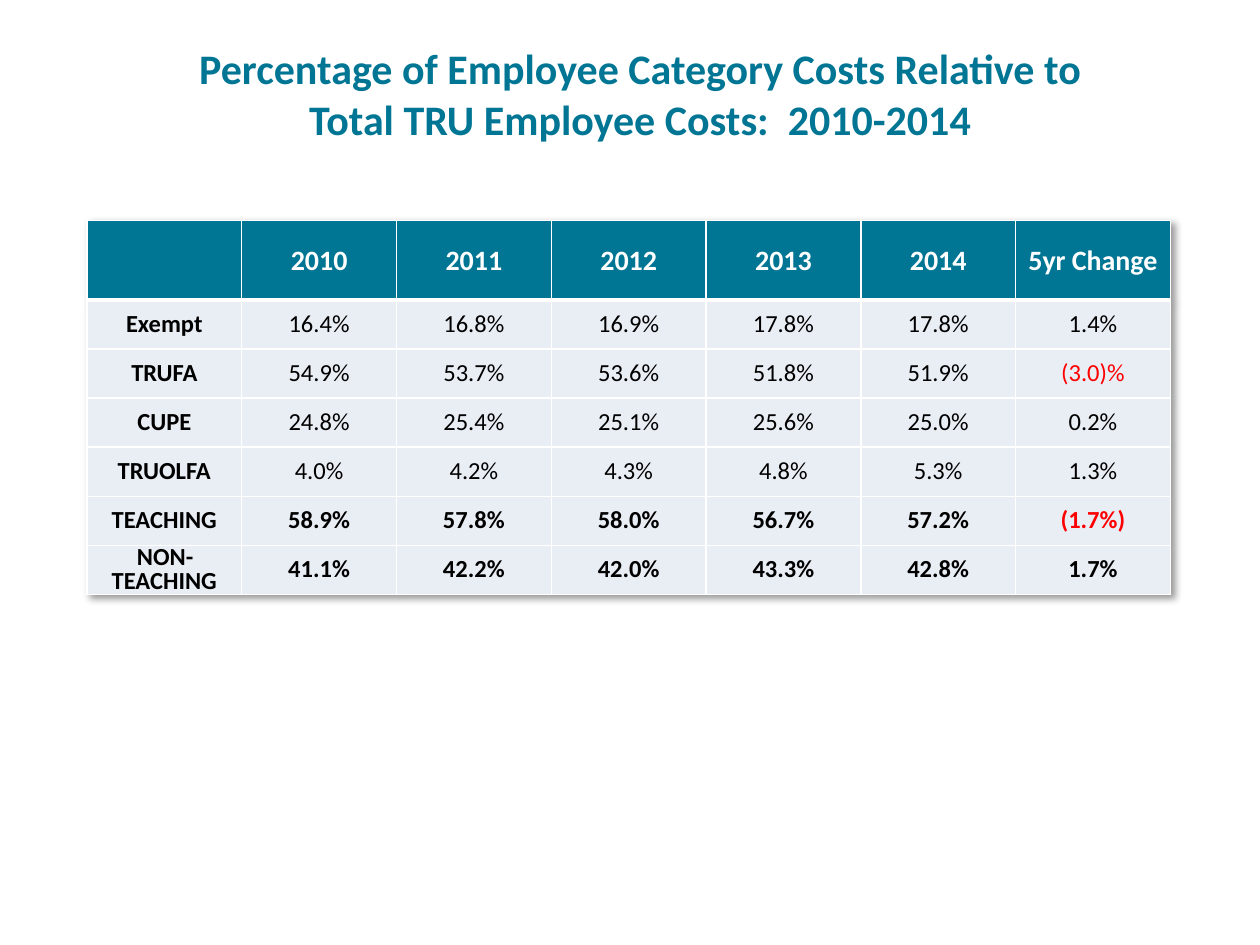
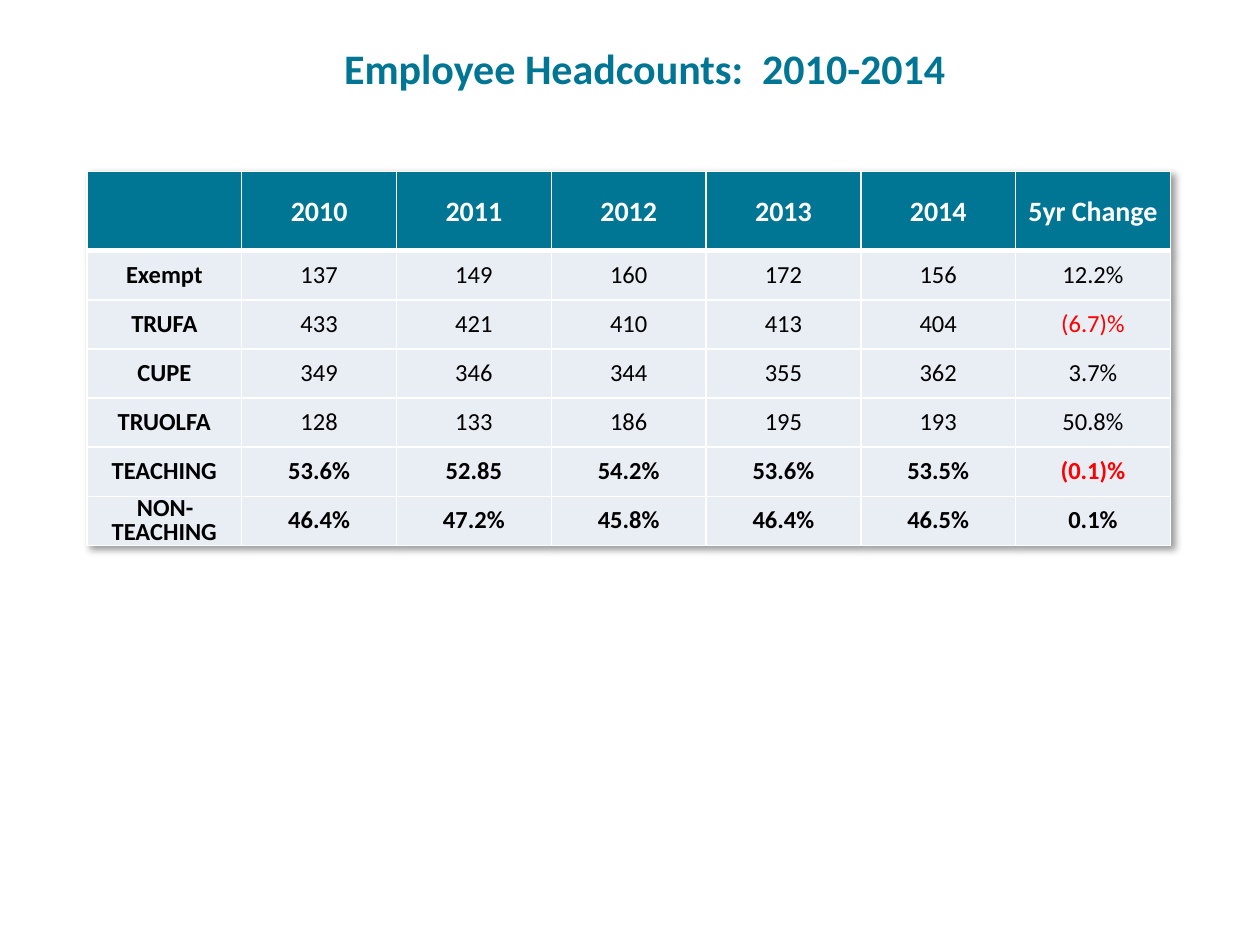
from lxml.etree import SubElement
from pptx import Presentation
from pptx.dml.color import RGBColor
from pptx.enum.text import MSO_ANCHOR, MSO_AUTO_SIZE, PP_ALIGN
from pptx.oxml import parse_xml
from pptx.oxml.ns import qn
from pptx.util import Inches, Pt

COLORS = {"teal": "007694", "pale": "E9EDF4", "white": "FFFFFF",
          "black": "000000", "red": "FF0000"}
HEADS = ["", "2010", "2011", "2012", "2013", "2014", "5yr Change"]
GROUPS = ["Exempt", "TRUFA", "CUPE", "TRUOLFA", "TEACHING", "NON-TEACHING"]
TOTALS = ("TEACHING", "NON-TEACHING")
SHADOW = (
    '<a:effectLst xmlns:a="http://schemas.openxmlformats.org/drawingml/2006/main">'
    '<a:outerShdw blurRad="50800" dist="38100" dir="2700000" algn="tl" rotWithShape="0">'
    '<a:srgbClr val="000000"><a:alpha val="40000"/></a:srgbClr>'
    '</a:outerShdw></a:effectLst>')

COSTS = [
    ["16.4%", "16.8%", "16.9%", "17.8%", "17.8%", "1.4%"],
    ["54.9%", "53.7%", "53.6%", "51.8%", "51.9%", "(3.0)%"],
    ["24.8%", "25.4%", "25.1%", "25.6%", "25.0%", "0.2%"],
    ["4.0%", "4.2%", "4.3%", "4.8%", "5.3%", "1.3%"],
    ["58.9%", "57.8%", "58.0%", "56.7%", "57.2%", "(1.7%)"],
    ["41.1%", "42.2%", "42.0%", "43.3%", "42.8%", "1.7%"],
]
COUNTS = [
    ["137", "149", "160", "172", "156", "12.2%"],
    ["433", "421", "410", "413", "404", "(6.7)%"],
    ["349", "346", "344", "355", "362", "3.7%"],
    ["128", "133", "186", "195", "193", "50.8%"],
    ["53.6%", "52.85", "54.2%", "53.6%", "53.5%", "(0.1)%"],
    ["46.4%", "47.2%", "45.8%", "46.4%", "46.5%", "0.1%"],
]


def apply(target, values):
    for name, value in values.items():
        setattr(target, name, value)


class Deck:
    def __init__(self):
        self.show = Presentation()
        apply(self.show, {"slide_width": Inches(10), "slide_height": Inches(7.5)})
        self.slide = None

    def page(self):
        self.slide = self.show.slides.add_slide(self.show.slide_layouts[6])

    def label(self, frame, text, size, color, bold, **layout):
        par = frame.paragraphs[0]
        apply(par, {"alignment": PP_ALIGN.CENTER, **layout})
        run = par.add_run()
        run.text = text
        apply(run.font, {"name": "Calibri", "size": Pt(size), "bold": bold})
        run.font.color.rgb = RGBColor.from_string(COLORS[color])

    def title(self, text, height):
        box = self.slide.shapes.add_textbox(
            Inches(1.17), Inches(0.29), Inches(7.82), Inches(height))
        apply(box.text_frame, {"word_wrap": True,
                               "auto_size": MSO_AUTO_SIZE.SHAPE_TO_FIT_TEXT})
        self.label(box.text_frame, text, 24, "teal", True, space_after=Pt(6))

    def border(self, cell, widths):
        props = cell._tc.get_or_add_tcPr()
        for side, width in widths.items():
            line = SubElement(props, qn(f"a:ln{side}"), w=str(Pt(width)))
            fill = SubElement(line, qn("a:solidFill"))
            SubElement(fill, qn("a:srgbClr"), val=COLORS["white"])

    def cell(self, cell, text, row, col):
        head = row == 0
        apply(cell, {"vertical_anchor": MSO_ANCHOR.MIDDLE,
                     "margin_left": Inches(0.01), "margin_right": Inches(0.01),
                     "margin_top": Inches(0.01), "margin_bottom": 0})
        self.border(cell, {"L": 1, "R": 1, "T": 3 if row == 1 else 1,
                           "B": 3 if head else 1})
        cell.fill.solid()
        cell.fill.fore_color.rgb = RGBColor.from_string(
            COLORS["teal" if head else "pale"])
        if head and text:
            self.label(cell.text_frame, text, 16, "white", True)
        elif text:
            color = "red" if text.startswith("(") else "black"
            bold = col == 0 or GROUPS[row - 1] in TOTALS
            self.label(cell.text_frame, text, 14, color, bold, line_spacing=0.8)

    def table(self, top, data):
        rows = [HEADS] + [[group, *vals] for group, vals in zip(GROUPS, data)]
        grid = self.slide.shapes.add_table(
            len(rows), len(HEADS), Inches(0.69), Inches(top),
            Inches(8.6), Inches(2.98)).table
        grid._tbl.tblPr.insert(0, parse_xml(SHADOW))
        for col in grid.columns:
            col.width = Inches(8.6 / len(HEADS))
        for r, row in enumerate(rows):
            grid.rows[r].height = Inches(0.39 if r else 0.63)
            for c, text in enumerate(row):
                self.cell(grid.cell(r, c), text, r, c)


def main():
    deck = Deck()
    pages = [
        ("Percentage of Employee Category Costs Relative to "
         "Total TRU Employee Costs:  2010-2014", 0.91, 1.75, COSTS),
        (" Employee Headcounts:  2010-2014", 0.5, 1.36, COUNTS),
    ]
    for text, height, top, data in pages:
        deck.page()
        deck.title(text, height)
        deck.table(top, data)
    deck.show.save("out.pptx")


if __name__ == "__main__":
    main()
